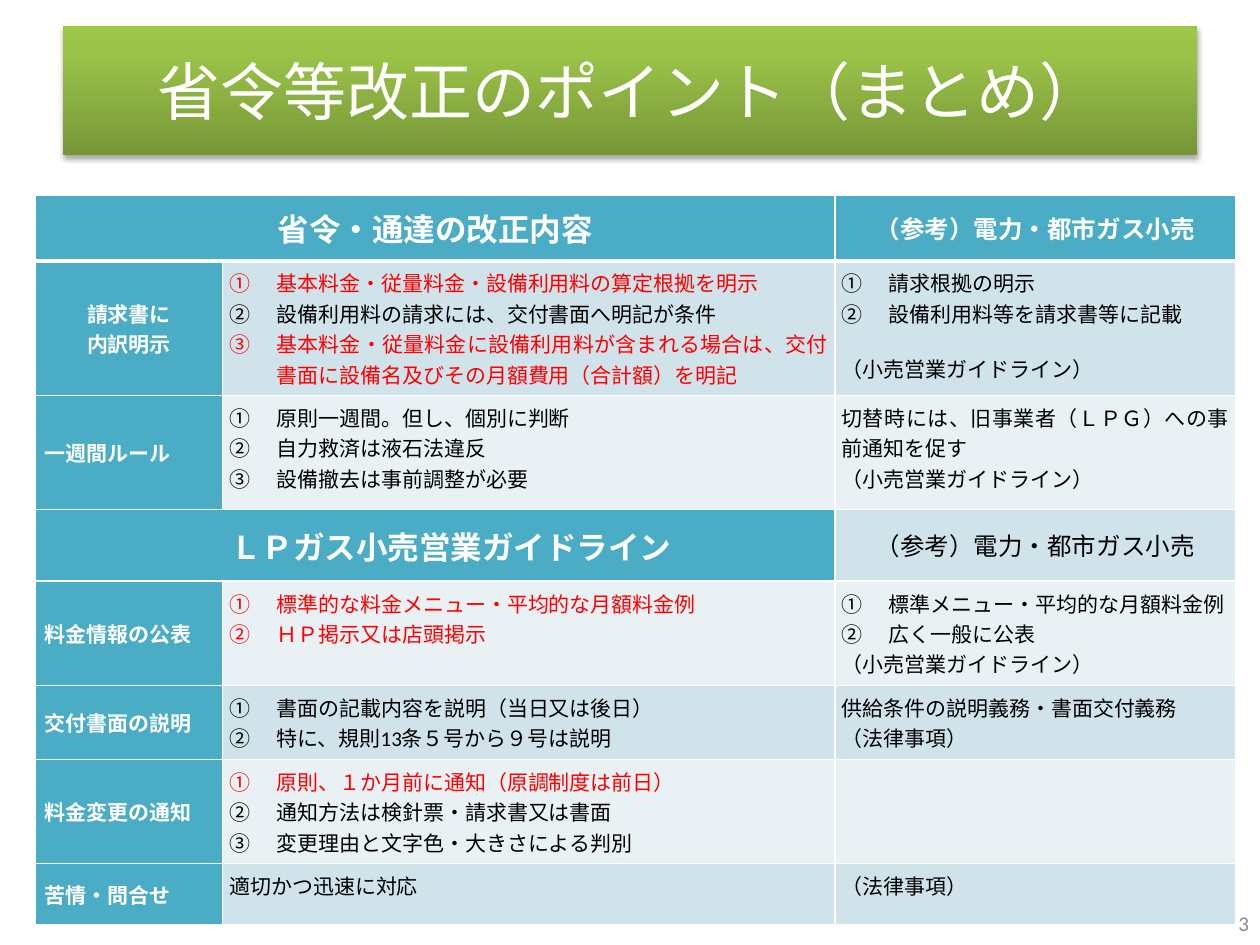
import copy

import pptx
import pptx.dml.color
import pptx.enum.shapes
import pptx.enum.text
import pptx.oxml
import pptx.oxml.ns
import pptx.util

Cm = pptx.util.Cm
Pt = pptx.util.Pt
RGBColor = pptx.dml.color.RGBColor
ALIGN = pptx.enum.text.PP_ALIGN
MIDDLE = pptx.enum.text.MSO_ANCHOR.MIDDLE
TOP = pptx.enum.text.MSO_ANCHOR.TOP

WHITE = RGBColor(0xFF, 0xFF, 0xFF)
BLACK = RGBColor(0x00, 0x00, 0x00)
RED = RGBColor(0xFF, 0x00, 0x00)
GRAY = RGBColor(0x8C, 0x8C, 0x8C)
TEAL = RGBColor(0x4B, 0xAC, 0xC6)
BAND_DARK = RGBColor(0xD0, 0xE3, 0xEA)
BAND_LIGHT = RGBColor(0xE9, 0xF1, 0xF5)
GREENS = [(0, RGBColor(0x77, 0x97, 0x37)), (0.8, RGBColor(0x9B, 0xC3, 0x48)),
          (1, RGBColor(0x9D, 0xC7, 0x46))]

# Content: each cell is a list of (paragraph style, text)
TITLE = "省令等改正のポイント（まとめ）"
PAGE_NUMBER = "3"
REFERENCE = "（参考）電力・都市ガス小売"
GUIDELINE = "（小売営業ガイドライン）"
ROWS = [
    [[("heading", "省令・通達の改正内容")], None, [("reference head", REFERENCE)]],
    [[("centred label", "請求書に"), ("centred label", "内訳明示")],
     [("red item", "基本料金・従量料金・設備利用料の算定根拠を明示"),
      ("item", "設備利用料の請求には、交付書面へ明記が条件"),
      ("red item", "基本料金・従量料金に設備利用料が含まれる場合は、"
                   "交付書面に設備名及びその月額費用（合計額）を明記")],
     [("item", "請求根拠の明示"), ("item", "設備利用料等を請求書等に記載"),
      ("spaced", GUIDELINE)]],
    [[("label", "一週間ルール")],
     [("item", "原則一週間。但し、個別に判断"), ("item", "自力救済は液石法違反"),
      ("item", "設備撤去は事前調整が必要")],
     [("plain", "切替時には、旧事業者（ＬＰＧ）への事前通知を促す"), ("plain", GUIDELINE)]],
    [[("indented heading", "ＬＰガス小売営業ガイドライン")], None, [("reference", REFERENCE)]],
    [[("label", "料金情報の公表")],
     [("red item", "標準的な料金メニュー・平均的な月額料金例"), ("red item", "ＨＰ掲示又は店頭掲示")],
     [("item", "標準メニュー・平均的な月額料金例"), ("item", "広く一般に公表"),
      ("plain", GUIDELINE)]],
    [[("label", "交付書面の説明")],
     [("item", "書面の記載内容を説明（当日又は後日）"),
      ("item", "特に、規則13条５号から９号は説明")],
     [("plain", "供給条件の説明義務・書面交付義務"), ("plain", "（法律事項）")]],
    [[("label", "料金変更の通知")],
     [("red item", "原則、１か月前に通知（原調制度は前日）"),
      ("item", "通知方法は検針票・請求書又は書面"),
      ("item", "変更理由と文字色・大きさによる判別")],
     []],
    [[("label", "苦情・問合せ")], [("plain", "適切かつ迅速に対応")], [("plain", "（法律事項）")]],
]
COLUMN_WIDTHS = [3.78, 12.34, 8.08]
ROW_HEIGHTS = [1.32, 2.67, 2.29, 1.45, 2.06, 1.4, 2.01, 1.22]
HEADING_ROWS = (0, 3)

# Paragraph styles: font values, alignment, and extras
PLAIN = {"font": {"size": Pt(12), "bold": False}, "color": BLACK,
         "paragraph": {"alignment": ALIGN.JUSTIFY}}
ITEM = {**PLAIN, "numbered": True}
LABEL = {**PLAIN, "font": {"size": Pt(12), "bold": True}, "color": WHITE}
CENTRED = {"alignment": ALIGN.CENTER}
HEADING = {"font": {"size": Pt(18), "bold": True}, "color": WHITE, "paragraph": CENTRED}
STYLES = {
    "plain": PLAIN,
    "spaced": {**PLAIN, "paragraph": {"alignment": ALIGN.JUSTIFY, "space_before": Pt(14)}},
    "item": ITEM,
    "red item": {**ITEM, "color": RED},
    "label": LABEL,
    "centred label": {**LABEL, "paragraph": CENTRED},
    "heading": HEADING,
    "indented heading": {**HEADING, "margin": Cm(0.64)},
    "reference head": {**HEADING, "font": {"size": Pt(14), "bold": True}},
    "reference": {**PLAIN, "font": {"size": Pt(14), "bold": False}, "paragraph": CENTRED},
    "title": {**HEADING, "font": {"size": Pt(36), "bold": False}},
    "page number": {**PLAIN, "color": GRAY, "paragraph": {"alignment": ALIGN.RIGHT}},
}
LABEL_MARGINS = dict(margin_left=Cm(0.18), margin_right=Cm(0.18), margin_top=0, margin_bottom=0)
BODY_MARGINS = {"margin_" + side: Cm(0.13) for side in ("left", "right", "top", "bottom")}


def set_values(target, values):
    for name, value in values.items():
        setattr(target, name, value)


def write(text_frame, entries):
    for index, (style_name, text) in enumerate(entries):
        style = STYLES[style_name]
        paragraph = text_frame.paragraphs[0] if index == 0 else text_frame.add_paragraph()
        properties = paragraph._p.get_or_add_pPr()
        if style.get("numbered"):
            properties.set("marL", str(Cm(0.95)))
            properties.set("indent", str(-Cm(0.95)))
            bullet = pptx.oxml.parse_xml(
                f'<a:buAutoNum {pptx.oxml.ns.nsdecls("a")} type="circleNumDbPlain"/>')
            properties.append(bullet)
        elif "margin" in style:
            properties.set("marL", str(style["margin"]))
        set_values(paragraph, style["paragraph"])
        run = paragraph.add_run()
        run.text = text
        set_values(run.font, {"name": "Calibri", **style["font"]})
        run.font.color.rgb = style["color"]


def set_borders(cell, widths):
    properties = cell._tc.get_or_add_tcPr()
    for index, (side, width) in enumerate(widths.items()):
        properties.insert(index, pptx.oxml.parse_xml(
            f'<a:ln{side} {pptx.oxml.ns.nsdecls("a")} w="{Pt(width)}">'
            f'<a:solidFill><a:srgbClr val="{WHITE}"/></a:solidFill></a:ln{side}>'))


def add_title(slide):
    title = slide.shapes.add_shape(pptx.enum.shapes.MSO_SHAPE.RECTANGLE,
                                   Cm(1.27), Cm(0.53), Cm(22.86), Cm(2.6))
    title.line.fill.background()
    title.fill.gradient()
    title.fill.gradient_angle = 90
    stop_list = title._element.spPr.find(".//" + pptx.oxml.ns.qn("a:gsLst"))
    stop_list.append(copy.deepcopy(stop_list[-1]))
    for stop, (position, color) in zip(title.fill.gradient_stops, GREENS):
        stop.position = position
        stop.color.rgb = color
    # Soft shadow below the banner
    title._element.spPr.append(pptx.oxml.parse_xml(
        f'<a:effectLst {pptx.oxml.ns.nsdecls("a")}>'
        f'<a:outerShdw blurRad="{Pt(3.1)}" dist="{Pt(1.8)}" dir="5400000" rotWithShape="0">'
        f'<a:srgbClr val="{BLACK}"><a:alpha val="35000"/></a:srgbClr>'
        '</a:outerShdw></a:effectLst>'))
    title.text_frame.word_wrap = True
    title.text_frame.vertical_anchor = MIDDLE
    write(title.text_frame, [("title", TITLE)])


def add_summary_table(slide):
    table = slide.shapes.add_table(len(ROWS), len(COLUMN_WIDTHS), Cm(0.71), Cm(3.94),
                                   Cm(sum(COLUMN_WIDTHS)), Cm(sum(ROW_HEIGHTS))).table
    for column, width in zip(table.columns, COLUMN_WIDTHS):
        column.width = Cm(width)
    for row, height in zip(table.rows, ROW_HEIGHTS):
        row.height = Cm(height)
    for row in HEADING_ROWS:
        table.cell(row, 0).merge(table.cell(row, 1))

    for row, entries_by_column in enumerate(ROWS):
        for column, entries in enumerate(entries_by_column):
            cell = table.cell(row, column)
            is_label = row == 0 or column == 0
            in_heading = row in HEADING_ROWS
            teal = is_label or (in_heading and column < 2)
            cell.fill.solid()
            cell.fill.fore_color.rgb = TEAL if teal else BAND_DARK if row % 2 else BAND_LIGHT
            set_borders(cell, {"L": 1, "R": 1, "T": 3 if row == 1 else 1,
                               "B": 3 if row == 0 else 1})
            set_values(cell, LABEL_MARGINS if is_label and row != 3 else BODY_MARGINS)
            cell.vertical_anchor = MIDDLE if is_label or in_heading else TOP
            if entries:
                write(cell.text_frame, entries)


def add_page_number(slide):
    box = slide.shapes.add_textbox(Cm(19.5), Cm(18.1), Cm(5.93), Cm(1.01))
    box.text_frame.word_wrap = True
    box.text_frame.vertical_anchor = MIDDLE
    write(box.text_frame, [("page number", PAGE_NUMBER)])


def main():
    presentation = pptx.Presentation()
    presentation.slide_width = Cm(25.4)
    presentation.slide_height = Cm(19.05)
    slide = presentation.slides.add_slide(presentation.slide_layouts[6])
    add_title(slide)
    add_summary_table(slide)
    add_page_number(slide)
    presentation.save("out.pptx")


if __name__ == "__main__":
    main()
